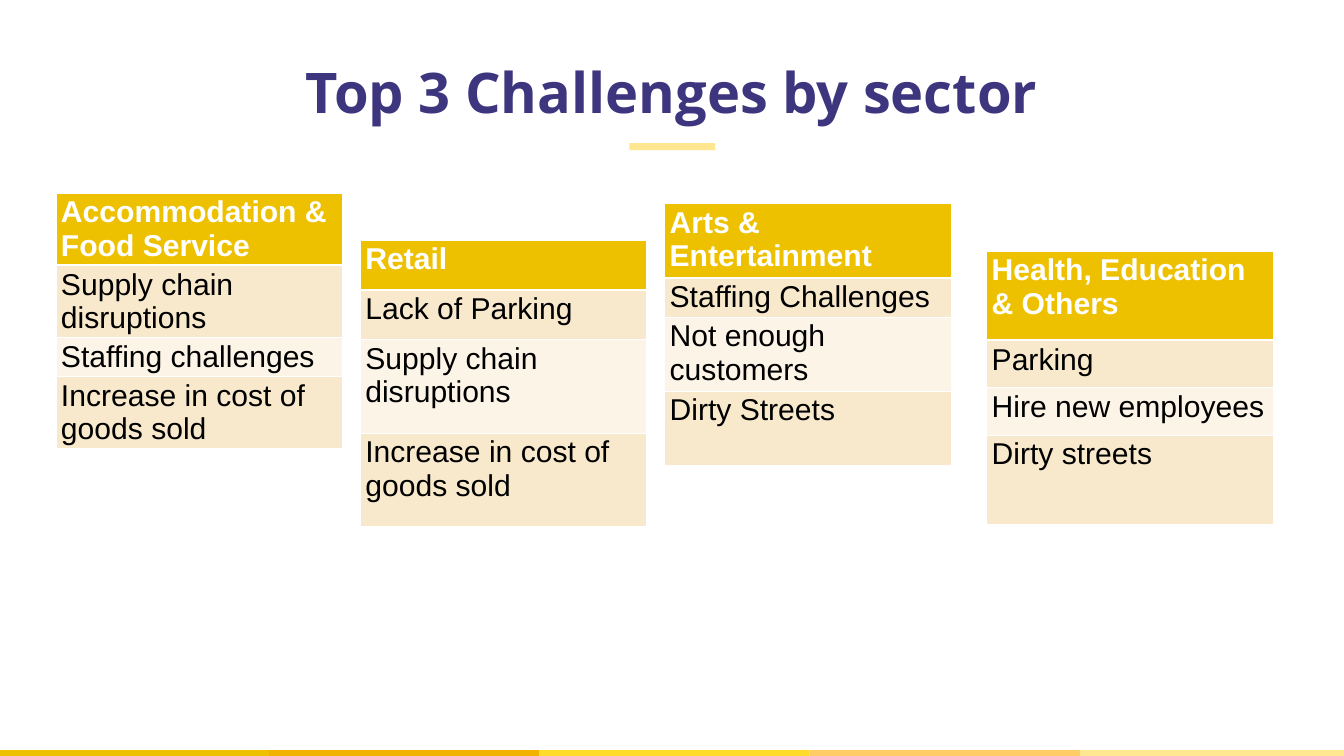
"""Build the slide showing the top three challenges for each business sector."""
import pptx
import pptx.dml.color
import pptx.enum.shapes
import pptx.enum.text
import pptx.oxml
import pptx.oxml.ns
import pptx.util

Cm, Pt = pptx.util.Cm, pptx.util.Pt
RGB = pptx.dml.color.RGBColor

WHITE = RGB(0xFF, 0xFF, 0xFF)
BLACK = RGB(0, 0, 0)
PURPLE = RGB(0x3D, 0x36, 0x7E)
GOLD = RGB(0xED, 0xC1, 0x00)
SAND = RGB(0xF8, 0xE9, 0xCC)
CREAM = RGB(0xFC, 0xF4, 0xE7)
PALE = RGB(0xFF, 0xE7, 0x91)
STRIPES = [GOLD, RGB(0xF2, 0xB2, 0x00), RGB(0xFF, 0xDB, 0x2B), RGB(0xFF, 0xCC, 0x66), PALE]
ROW_FILLS = [GOLD, SAND, CREAM, SAND]

TITLE = "Top 3 Challenges by sector"
SECTORS = [
    {"at": (2.82, 9.73), "heights": (2.16, 1.04, 1.04, 1.04),
     "rows": ("Accommodation & Food Service", "Supply chain disruptions",
              "Staffing challenges", "Increase in cost of goods sold")},
    {"at": (18.16, 12.09), "heights": (2.51, 2.51, 4.72, 4.72),
     "rows": ("Retail", "Lack of Parking",
              "Supply chain disruptions", "Increase in cost of goods sold")},
    {"at": (33.5, 10.26), "heights": (3.73, 1.98, 3.73, 3.73),
     "rows": ("Arts & Entertainment", "Staffing Challenges",
              "Not enough customers", "Dirty Streets")},
    {"at": (49.73, 12.65), "heights": (4.5, 2.39, 2.39, 4.5),
     "rows": ("Health, Education & Others", "Parking",
              "Hire new employees", "Dirty streets")},
]
TABLE_WIDTH = 14.43
STRIPE_WIDTH = 13.63


def add_bar(slide, left, top, width, height, color):
    sp = slide.shapes.add_shape(pptx.enum.shapes.MSO_SHAPE.RECTANGLE,
                                Cm(left), Cm(top), Cm(width), Cm(height))
    sp.shadow.inherit = False
    sp.fill.solid()
    sp.fill.fore_color.rgb = color
    sp.line.fill.background()


def add_title(slide):
    sp = slide.shapes.title
    sp.left, sp.top, sp.width, sp.height = Cm(5.08), Cm(3.02), Cm(57.58), Cm(3.15)
    tf = sp.text_frame
    tf.text = TITLE
    tf.word_wrap = True
    tf.auto_size = pptx.enum.text.MSO_AUTO_SIZE.NONE
    tf.vertical_anchor = pptx.enum.text.MSO_ANCHOR.MIDDLE
    tf.margin_left = tf.margin_right = Cm(0.61)
    tf.margin_top = tf.margin_bottom = Cm(0.3)
    p = tf.paragraphs[0]
    p.alignment = pptx.enum.text.PP_ALIGN.CENTER
    style_font(p.font, "Open Sans", 80, PURPLE, True)


def style_font(font, name, size, color, bold):
    font.name, font.size, font.bold = name, Pt(size), bold
    font.color.rgb = color


def add_borders(cell, row):
    widths = {"L": 1, "R": 1, "T": 3 if row == 1 else 1, "B": 3 if row == 0 else 1}
    tc_pr = cell._tc.get_or_add_tcPr()
    for side, width in widths.items():
        tc_pr.append(pptx.oxml.parse_xml(
            f'<a:ln{side} {pptx.oxml.ns.nsdecls("a")} w="{Pt(width)}">'
            f'<a:solidFill><a:srgbClr val="{WHITE}"/></a:solidFill></a:ln{side}>'))


def add_sector(slide, sector):
    left, top = sector["at"]
    table = slide.shapes.add_table(len(sector["rows"]), 1, Cm(left), Cm(top),
                                   Cm(TABLE_WIDTH), Cm(sum(sector["heights"]))).table
    for i, (text, height) in enumerate(zip(sector["rows"], sector["heights"])):
        table.rows[i].height = Cm(height)
        cell = table.cell(i, 0)
        add_borders(cell, i)
        cell.fill.solid()
        cell.fill.fore_color.rgb = ROW_FILLS[i]
        cell.text = text
        header = i == 0
        style_font(cell.text_frame.paragraphs[0].font, "Arial", 43,
                   WHITE if header else BLACK, header)


def main():
    prs = pptx.Presentation()
    prs.slide_width, prs.slide_height = Cm(67.74), Cm(38.1)
    slide = prs.slides.add_slide(prs.slide_layouts[5])
    for i, color in enumerate(STRIPES):
        add_bar(slide, i * STRIPE_WIDTH - 0.08, 37.8, STRIPE_WIDTH, 0.5, color)
    add_title(slide)
    add_bar(slide, 31.72, 7.21, 4.32, 0.36, PALE)
    for sector in SECTORS:
        add_sector(slide, sector)
    prs.save("out.pptx")


if __name__ == "__main__":
    main()
